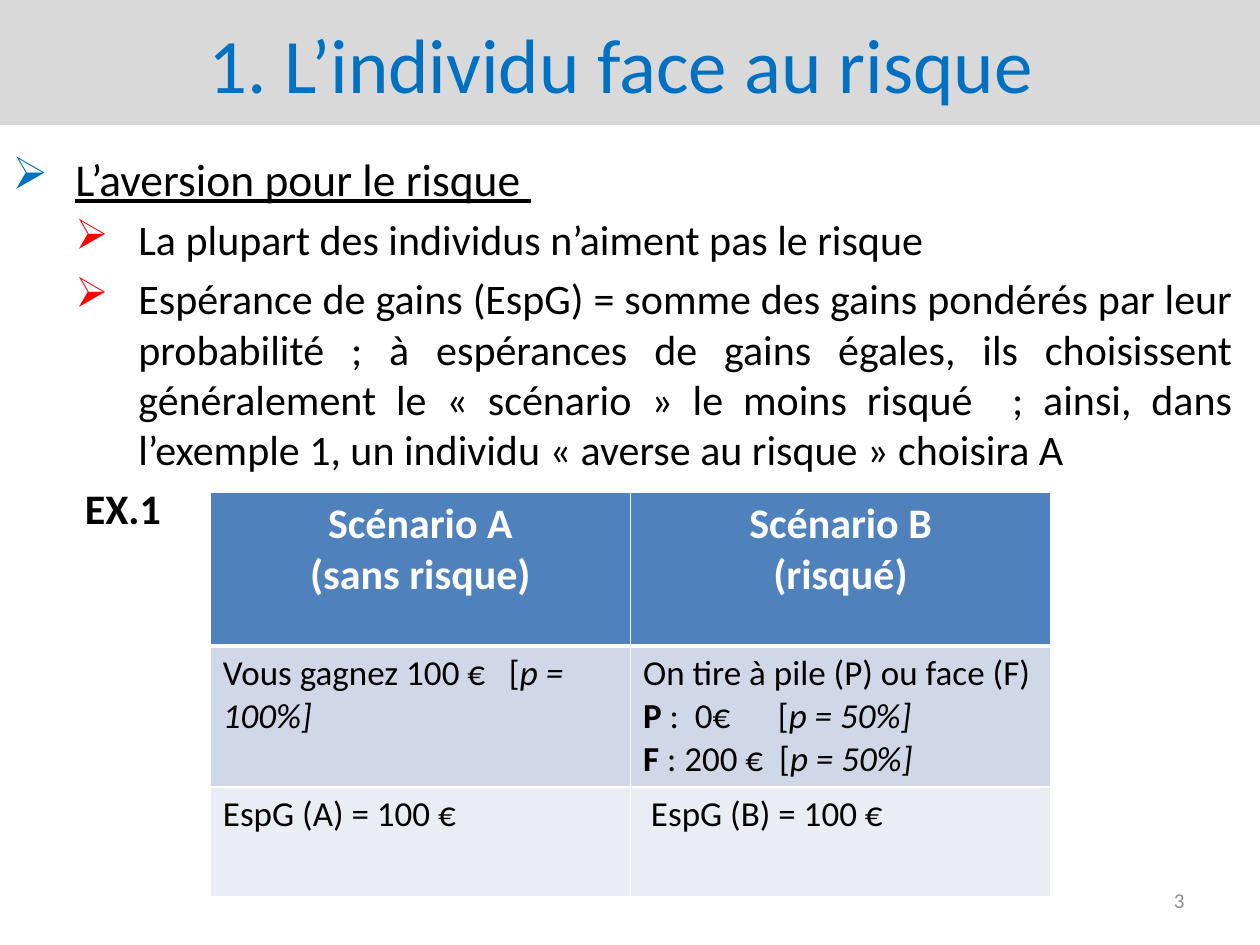
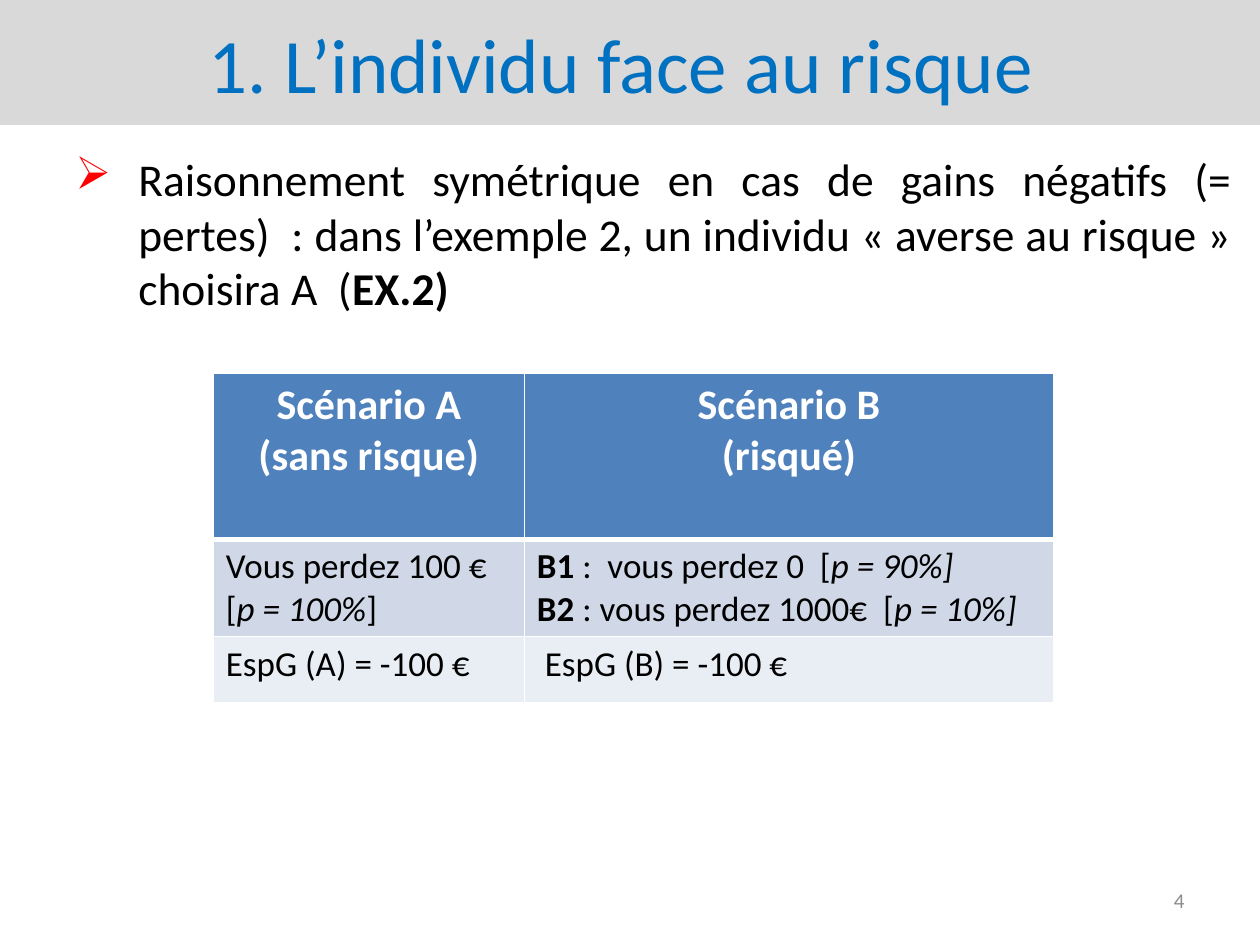
from lxml.etree import SubElement
from pptx import Presentation
from pptx.dml.color import RGBColor
from pptx.enum.shapes import MSO_SHAPE as Shape
from pptx.enum.text import MSO_ANCHOR as Anchor, PP_ALIGN as Align
from pptx.oxml.ns import qn
from pptx.util import Cm, Pt

# Shared look
FONT = "Calibri"
BLACK, WHITE, RED, BLUE = "000000", "FFFFFF", "FF0000", "0070C0"
BAND, NUMBER_GREY = "D9D9D9", "8C8C8C"
ROW_FILLS = ["4F81BD", "D0D8E8", "E9EDF4"]
INDENT = 1.27  # cm per outline step

# Content: a paragraph is a list of (text, style) runs; style letters are b, i, u
TITLE = "1. L’individu face au risque "
HEADER = [[[("Scénario A", "b")], [("(sans risque)", "b")]],
          [[("Scénario B", "b")], [("(risqué)", "b")]]]

SLIDES = [
    {
        "number": 3,
        # (runs, size, bullet colour, left steps)
        "outline": [
            ([("L’aversion pour le risque ", "u")], 26, BLUE, 1),
            ([("La plupart des individus n’aiment pas le risque ", "")], 24, RED, 2),
            ([("Espérance de gains (EspG) = somme des gains pondérés par leur "
               "probabilité ; à espérances de gains égales, ils choisissent "
               "généralement le « scénario » le moins risqué  ; ainsi, dans "
               "l’exemple 1, un individu « averse au risque » choisira A", "")],
             24, RED, 2),
            ([(" ", ""), ("EX.1", "b")], 24, None, 1),
        ],
        "corner": (4.24, 9.92),
        "columns": [8.47, 8.47],
        "rows": [3.1, 2.84, 2.22],
        "cells": [
            [[[("Vous gagnez 100 €   [", ""), ("p = 100%]", "i")]],
             [[("On tire à pile (P) ou face (F)", "")],
              [("P", "b"), (" :  0€      [", ""), ("p = 50%]", "i")],
              [("F", "b"), (" : 200 €  [", ""), ("p = 50%]", "i")]]],
            [[[("EspG (A) = 100 €", "")]], [[(" EspG (B) = 100 €", "")]]],
        ],
    },
    {
        "number": 4,
        "outline": [
            ([("Raisonnement symétrique en cas de gains négatifs (= pertes)  : "
               "dans l’exemple 2, un individu « averse au risque » choisira A  (", ""),
              ("EX.2)", "b")], 26, RED, 2),
        ],
        "corner": (4.3, 7.52),
        "columns": [6.27, 10.67],
        "rows": [3.35, 1.96, 1.34],
        "cells": [
            [[[("Vous perdez 100 €", "")],
              [("[", ""), ("p = 100%", "i"), ("]", "")]],
             [[("B1", "b"), (" :  vous perdez 0  [", ""), ("p = 90%]", "i")],
              [("B2", "b"), (" : vous perdez 1000€  [", ""), ("p = 10%]", "i")]]],
            [[[("EspG (A) = -100 €", "")]], [[(" EspG (B) = -100 €", "")]]],
        ],
    },
]


def rgb(color):
    return RGBColor.from_string(color)


def write(paragraph, runs, size=20, color=BLACK, align=Align.LEFT):
    paragraph.alignment = align
    for text, style in runs:
        run = paragraph.add_run()
        run.text = text
        font = run.font
        font.name, font.size = FONT, Pt(size)
        font.color.rgb = rgb(color)
        font.bold, font.italic, font.underline = (mark in style for mark in "biu")


def next_paragraph(frame, index):
    return frame.add_paragraph() if index else frame.paragraphs[0]


def add_title(slide, width):
    band = slide.shapes.add_shape(Shape.RECTANGLE, 0, 0, width, Cm(2.52))
    band.shadow.inherit = False
    band.fill.solid()
    band.fill.fore_color.rgb = rgb(BAND)
    band.line.fill.background()
    band.text_frame.vertical_anchor = Anchor.MIDDLE
    write(band.text_frame.paragraphs[0], [(TITLE, "")], 44, BLUE, Align.CENTER)


def add_outline(slide, outline):
    frame = slide.shapes.add_textbox(0, Cm(2.92), Cm(25.1), Cm(16.13)).text_frame
    frame.word_wrap = True
    for index, (runs, size, bullet_color, steps) in enumerate(outline):
        paragraph = next_paragraph(frame, index)
        write(paragraph, runs, size, align=Align.JUSTIFY)
        paragraph.space_before = Pt(size * 0.2)
        paragraph.level = 1 if index or steps == 2 else 0
        properties = paragraph._p.get_or_add_pPr()
        properties.set("marL", str(Cm(INDENT * steps)))
        properties.set("indent", str(-Cm(INDENT) if bullet_color else 0))
        if bullet_color:
            holder = SubElement(properties, qn("a:buClr"))
            SubElement(holder, qn("a:srgbClr"), val=bullet_color)
            SubElement(properties, qn("a:buChar"), char="➢")


def add_number(slide, number):
    frame = slide.shapes.add_textbox(Cm(18.2), Cm(17.65), Cm(5.93), Cm(1.01)).text_frame
    frame.word_wrap = True
    frame.vertical_anchor = Anchor.MIDDLE
    write(frame.paragraphs[0], [(str(number), "")], 12, NUMBER_GREY, Align.RIGHT)


def set_borders(cell, bottom):
    properties = cell._tc.get_or_add_tcPr()
    widths = {"lnL": 1, "lnR": 1, "lnT": 1, "lnB": bottom}
    for position, (side, points) in enumerate(widths.items()):
        line = SubElement(properties, qn(f"a:{side}"), w=str(Pt(points)))
        SubElement(SubElement(line, qn("a:solidFill")), qn("a:srgbClr"), val=WHITE)
        properties.insert(position, line)  # borders come before the fill


def add_scenarios(slide, corner, columns, rows, cells):
    left, top = corner
    table = slide.shapes.add_table(len(rows), len(columns), Cm(left), Cm(top),
                                   Cm(sum(columns)), Cm(sum(rows))).table
    for column, width in zip(table.columns, columns):
        column.width = Cm(width)
    for row_index, scenarios in enumerate([HEADER] + cells):
        table.rows[row_index].height = Cm(rows[row_index])
        is_header = row_index == 0
        look = {"size": 24, "color": WHITE, "align": Align.CENTER} if is_header else {}
        for column_index, paragraphs in enumerate(scenarios):
            cell = table.cell(row_index, column_index)
            cell.fill.solid()
            cell.fill.fore_color.rgb = rgb(ROW_FILLS[row_index])
            # The rule under the header is shared with the row below
            set_borders(cell, bottom=3 if is_header else 1)
            if row_index == 1:
                cell._tc.tcPr.find(qn("a:lnT")).set("w", str(Pt(3)))
            for index, runs in enumerate(paragraphs):
                write(next_paragraph(cell.text_frame, index), runs, **look)


def main():
    deck = Presentation()
    deck.slide_width, deck.slide_height = Cm(25.4), Cm(19.05)
    for content in SLIDES:
        slide = deck.slides.add_slide(deck.slide_layouts[6])
        add_title(slide, deck.slide_width)
        add_outline(slide, content["outline"])
        add_number(slide, content["number"])
        add_scenarios(slide, content["corner"], content["columns"],
                      content["rows"], content["cells"])
    deck.save("out.pptx")


if __name__ == "__main__":
    main()
